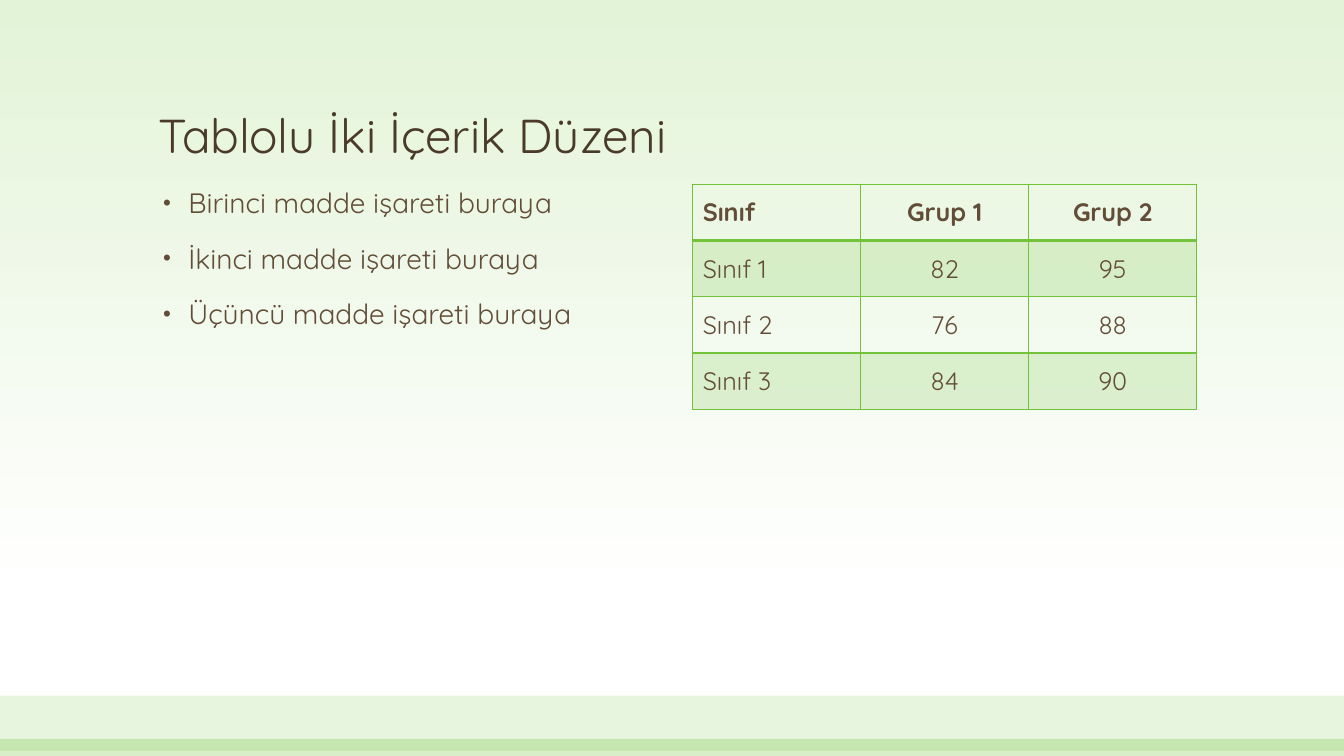
from dataclasses import dataclass

from lxml import etree
from pptx import Presentation
from pptx.dml.color import RGBColor
from pptx.enum.shapes import MSO_SHAPE
from pptx.enum.text import MSO_ANCHOR, PP_ALIGN
from pptx.oxml.ns import qn
from pptx.util import Inches, Pt

RECTANGLE = MSO_SHAPE.RECTANGLE
TOP, MIDDLE, BOTTOM = MSO_ANCHOR.TOP, MSO_ANCHOR.MIDDLE, MSO_ANCHOR.BOTTOM
LEFT, CENTER = PP_ALIGN.LEFT, PP_ALIGN.CENTER


@dataclass(frozen=True)
class Theme:
    """Colours, font and type sizes of the slide."""
    font: str = "Quicksand"
    green: str = "72C23C"
    pale_green: str = "E3F3D8"
    white: str = "FFFFFF"
    title_brown: str = "4A3A2A"
    text_brown: str = "624D38"
    title_size: int = 34
    body_size: int = 20
    table_size: int = 18


THEME = Theme()
BULLETS = [
    "Birinci madde işareti buraya",
    "İkinci madde işareti buraya",
    "Üçüncü madde işareti buraya",
]
SCORES = [
    ["Sınıf", "Grup 1", "Grup 2"],
    ["Sınıf 1", "82", "95"],
    ["Sınıf 2", "76", "88"],
    ["Sınıf 3", "84", "90"],
]


def style_paragraph(paragraph, size, color, bold=False):
    """Format every run of a paragraph."""
    for run in paragraph.runs:
        run.font.name = THEME.font
        run.font.size = Pt(size)
        run.font.bold = bold
        run.font.color.rgb = RGBColor.from_string(color)


def fill_green(fill, opacity):
    """Give a fill the theme green at an opacity in percent."""
    fill.solid()
    fill.fore_color.rgb = RGBColor.from_string(THEME.green)
    color = fill._xPr.find(qn("a:solidFill")).find(qn("a:srgbClr"))
    etree.SubElement(color, qn("a:alpha"), val=str(opacity * 1000))


def set_background(slide):
    """Fade the background from pale green down to white."""
    fill = slide.background.fill
    fill.gradient()
    fill.gradient_angle = 270
    stops = [(0, THEME.pale_green), (0.79, THEME.white)]
    for stop, (position, color) in zip(fill.gradient_stops, stops):
        stop.position = position
        stop.color.rgb = RGBColor.from_string(color)


def add_band(slide, top, height, opacity):
    """Add a translucent band across the slide."""
    band = slide.shapes.add_shape(
        RECTANGLE, 0, Inches(top), Inches(13.33), Inches(height))
    band.shadow.inherit = False
    band.line.fill.background()
    fill_green(band.fill, opacity)


def add_text(slide, left, top, width, height, lines, size, color, anchor):
    """Add a wrapped text box with one paragraph per line."""
    box = slide.shapes.add_textbox(
        Inches(left), Inches(top), Inches(width), Inches(height))
    frame = box.text_frame
    frame.word_wrap = True
    frame.vertical_anchor = anchor
    frame.text = "\n".join(lines)
    for paragraph in frame.paragraphs:
        paragraph.line_spacing = 0.9
        style_paragraph(paragraph, size, color)
    return frame


def add_bullet(paragraph):
    """Turn a paragraph into a spaced bullet point."""
    paragraph.space_before = Pt(18)
    properties = paragraph._p.get_or_add_pPr()
    properties.set("marL", str(Inches(0.3)))
    properties.set("indent", str(Inches(-0.25)))
    etree.SubElement(properties, qn("a:buSzPct"), val="80000")
    etree.SubElement(properties, qn("a:buFont"), typeface="Arial")
    etree.SubElement(properties, qn("a:buChar"), char="•")


def add_borders(cell, top_width, bottom_width):
    """Draw green lines on the four sides of a cell."""
    properties = cell._tc.get_or_add_tcPr()
    widths = {"a:lnL": 1, "a:lnR": 1, "a:lnT": top_width, "a:lnB": bottom_width}
    for tag, width in widths.items():
        line = etree.SubElement(properties, qn(tag), w=str(Pt(width)))
        fill = etree.SubElement(line, qn("a:solidFill"))
        etree.SubElement(fill, qn("a:srgbClr"), val=THEME.green)


def add_score_table(slide, left, top, width, height, rows):
    """Add the table with a bold header and shaded odd rows."""
    table = slide.shapes.add_table(
        len(rows), len(rows[0]),
        Inches(left), Inches(top), Inches(width), Inches(height)).table
    table.horz_banding = False
    for row_index, row in enumerate(rows):
        is_header = row_index == 0
        for column_index, text in enumerate(row):
            cell = table.cell(row_index, column_index)
            cell.text = text
            cell.vertical_anchor = MIDDLE
            paragraph = cell.text_frame.paragraphs[0]
            paragraph.alignment = CENTER if column_index else LEFT
            style_paragraph(
                paragraph, THEME.table_size, THEME.text_brown, is_header)
            add_borders(cell, 2 if row_index == 1 else 1, 2 if is_header else 1)
            if row_index % 2:
                fill_green(cell.fill, 20)
            else:
                cell.fill.background()


def main():
    """Build and save the slide."""
    presentation = Presentation()
    presentation.slide_width = Inches(13.33)
    presentation.slide_height = Inches(7.5)
    slide = presentation.slides.add_slide(presentation.slide_layouts[6])
    set_background(slide)
    add_band(slide, 6.9, 0.55, 17)
    add_band(slide, 7.33, 0.17, 28)
    add_text(slide, 1.47, 0.48, 10.4, 1.19, ["Tablolu İki İçerik Düzeni"],
             THEME.title_size, THEME.title_brown, BOTTOM)
    add_score_table(slide, 6.87, 1.83, 5, 2.23, SCORES)
    body = add_text(slide, 1.47, 1.83, 5, 4.75, BULLETS,
                    THEME.body_size, THEME.text_brown, TOP)
    for paragraph in body.paragraphs:
        add_bullet(paragraph)
    presentation.save("out.pptx")


if __name__ == "__main__":
    main()
